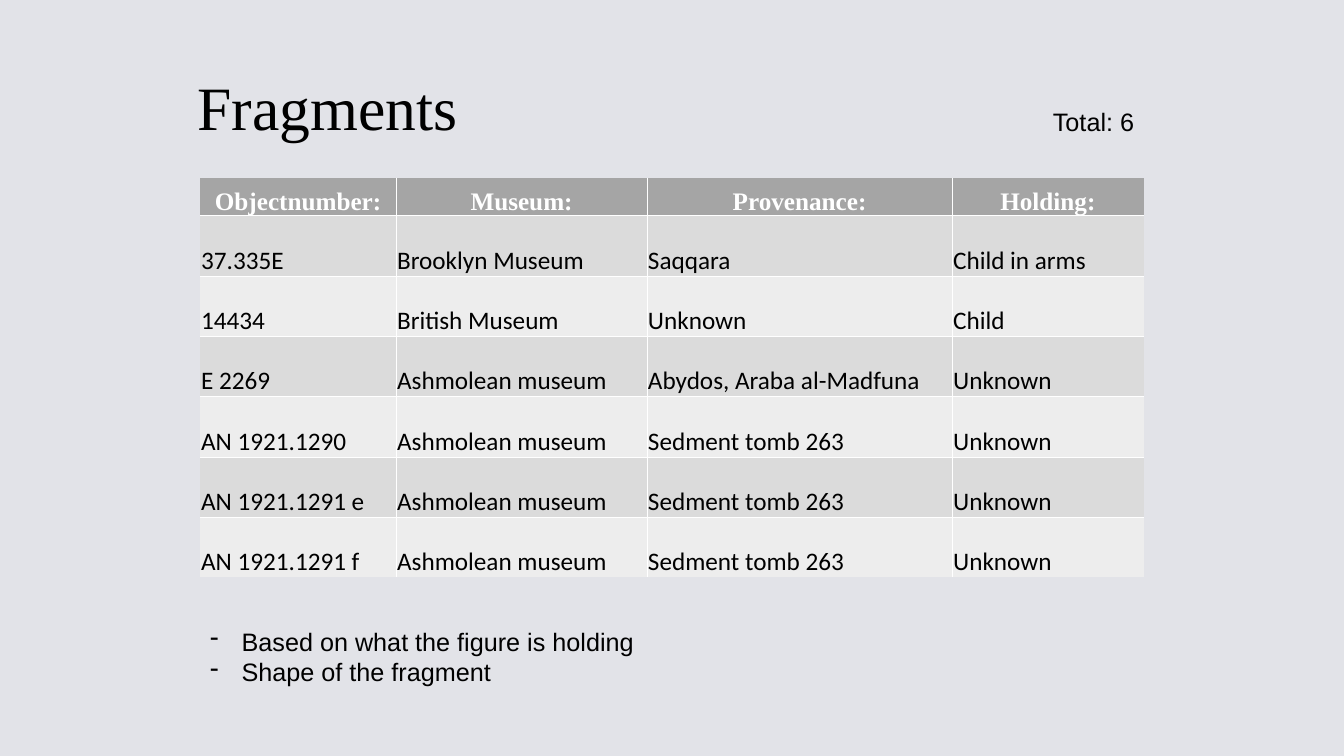
from lxml.etree import SubElement
from pptx import Presentation
from pptx.dml.color import RGBColor
from pptx.enum.text import MSO_ANCHOR, PP_ALIGN
from pptx.oxml.ns import qn
from pptx.util import Pt

HEADERS = ["Objectnumber:", "Museum:", "Provenance:", "Holding:"]
FRAGMENTS = [
    ["37.335E", "Brooklyn Museum", "Saqqara", "Child in arms"],
    ["14434", "British Museum", "Unknown", "Child"],
    ["E 2269", "Ashmolean museum", "Abydos, Araba al-Madfuna", "Unknown"],
    ["AN 1921.1290", "Ashmolean museum", "Sedment tomb 263", "Unknown"],
    ["AN 1921.1291 e", "Ashmolean museum", "Sedment tomb 263", "Unknown"],
    ["AN 1921.1291 f", "Ashmolean museum", "Sedment tomb 263", "Unknown"],
]
COLUMN_WIDTHS = [140, 179.2, 218, 136.8]
HEADER_HEIGHT, ROW_HEIGHT = 26.8, 43.1
NO_GRID_STYLE = "{2D5ABB26-0587-4C30-8999-92F81FD0307C}"


def color(value):
    return RGBColor.from_string(value)


def apply_format(target, values):
    for name, value in values.items():
        setattr(target, name, value)


class FragmentSlide:
    header_font = {"name": "Times New Roman", "size": Pt(18), "bold": True}
    cell_font = {"name": "Calibri", "size": Pt(18), "bold": False}
    title_font = {"name": "Times New Roman", "size": Pt(44)}
    body_font = {"name": "Arial", "size": Pt(18)}
    cell_format = {
        "vertical_anchor": MSO_ANCHOR.BOTTOM,
        "margin_left": Pt(0.7),
        "margin_right": Pt(0.7),
        "margin_top": Pt(0.7),
        "margin_bottom": Pt(0),
    }
    header_fill, band_fills = "A5A5A5", ["DBDBDB", "EDEDED"]
    light, dark = "FFFFFF", "000000"

    def __init__(self, presentation, background):
        self.slide = presentation.slides.add_slide(presentation.slide_layouts[6])
        fill = self.slide.background.fill
        fill.solid()
        fill.fore_color.rgb = color(background)

    def add_text(self, paragraph, text, font, font_color, alignment=PP_ALIGN.LEFT):
        paragraph.alignment = alignment
        run = paragraph.add_run()
        run.text = text
        apply_format(run.font, font)
        run.font.color.rgb = color(font_color)

    def text_box(self, box, lines, font, alignment=PP_ALIGN.LEFT, dashed=False):
        frame = self.slide.shapes.add_textbox(*map(Pt, box)).text_frame
        frame.word_wrap = True
        for index, line in enumerate(lines):
            paragraph = frame.add_paragraph() if index else frame.paragraphs[0]
            self.add_text(paragraph, line, font, self.dark, alignment)
            if dashed:
                self.dash(paragraph)

    def dash(self, paragraph, indent=22.5):
        """Give the paragraph a hanging dash bullet."""
        properties = paragraph._p.get_or_add_pPr()
        properties.set("marL", str(Pt(indent)))
        properties.set("indent", str(-Pt(indent)))
        SubElement(properties, qn("a:buChar"), char="-")

    def border(self, cell, sides):
        properties = cell._tc.get_or_add_tcPr()
        for side in sides:
            line = SubElement(properties, qn(f"a:ln{side}"), w=str(Pt(0.5)))
            fill = SubElement(line, qn("a:solidFill"))
            SubElement(fill, qn("a:srgbClr"), val=self.light)

    def table(self, left, top, rows, widths, heights):
        box = map(Pt, (left, top, sum(widths), sum(heights)))
        table = self.slide.shapes.add_table(len(rows), len(widths), *box).table
        table._tbl.tblPr.find(qn("a:tableStyleId")).text = NO_GRID_STYLE
        for column, width in zip(table.columns, widths):
            column.width = Pt(width)
        for row, height in zip(table.rows, heights):
            row.height = Pt(height)
        for row_index, row in enumerate(rows):
            for column_index, text in enumerate(row):
                cell = table.cell(row_index, column_index)
                inner_sides = {
                    "L": column_index > 0,
                    "R": column_index < len(widths) - 1,
                    "T": row_index > 0,
                    "B": row_index < len(rows) - 1,
                }
                self.border(cell, [side for side, inner in inner_sides.items() if inner])
                self.fill_cell(cell, text, row_index)

    def fill_cell(self, cell, text, row_index):
        apply_format(cell, self.cell_format)
        cell.fill.solid()
        paragraph = cell.text_frame.paragraphs[0]
        if row_index == 0:
            cell.fill.fore_color.rgb = color(self.header_fill)
            self.add_text(paragraph, text, self.header_font, self.light, PP_ALIGN.CENTER)
        else:
            cell.fill.fore_color.rgb = color(self.band_fills[(row_index - 1) % 2])
            self.add_text(paragraph, text, self.cell_font, self.dark)


def main():
    presentation = Presentation()
    presentation.slide_width, presentation.slide_height = Pt(960), Pt(540)
    page = FragmentSlide(presentation, "E2E3E8")
    heights = [HEADER_HEIGHT] + [ROW_HEIGHT] * len(FRAGMENTS)
    page.table(143, 127.2, [HEADERS] + FRAGMENTS, COLUMN_WIDTHS, heights)
    page.text_box((134, 45.4, 746.6, 60.5), ["Fragments"], page.title_font)
    total = f"Total: {len(FRAGMENTS)}"
    page.text_box((603.4, 72.7, 213.8, 28.8), [total], page.body_font, PP_ALIGN.RIGHT)
    notes = ["Based on what the figure is holding", "Shape of the fragment"]
    page.text_box((143, 443.5, 654.5, 51), notes, page.body_font, dashed=True)
    presentation.save("out.pptx")


if __name__ == "__main__":
    main()
